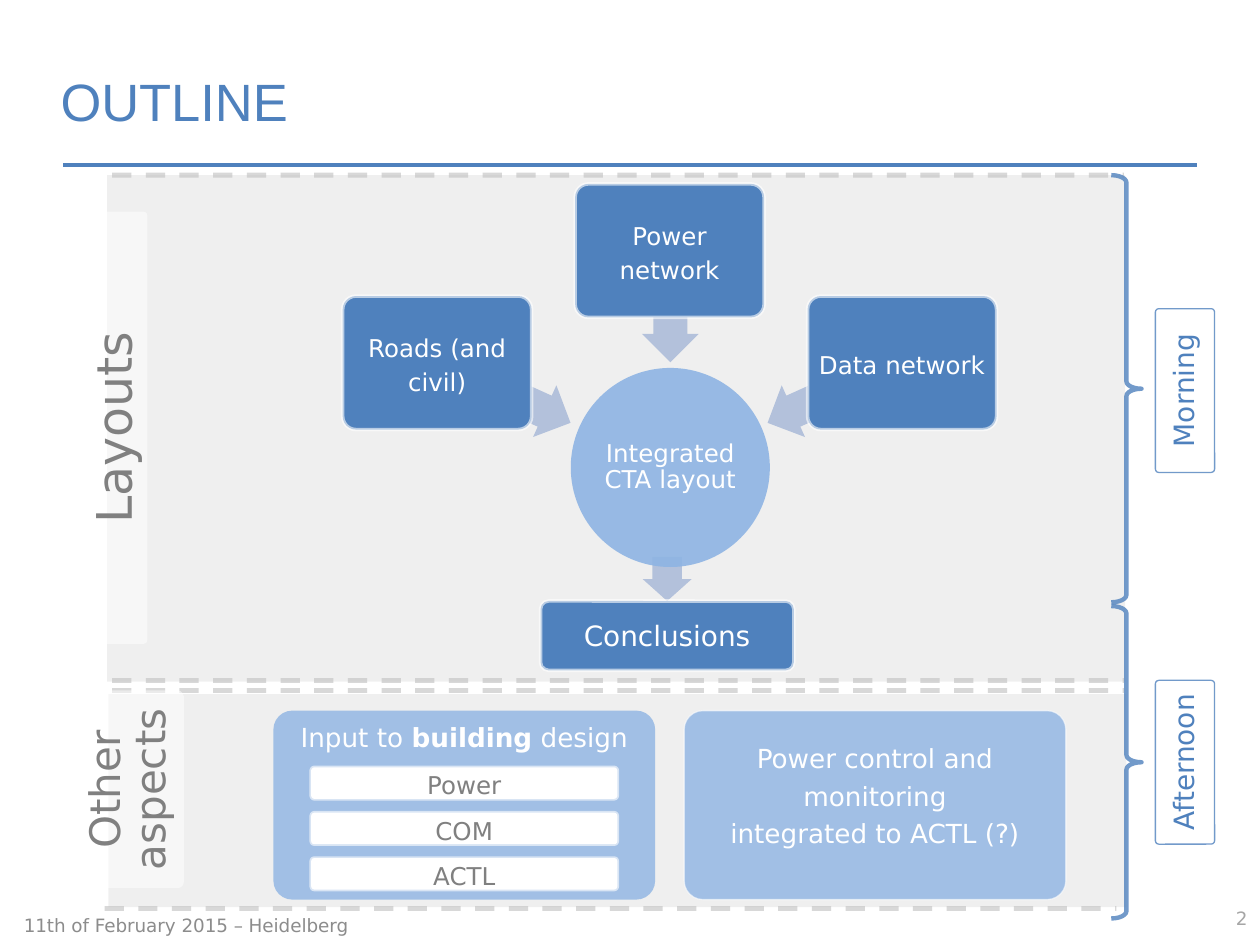
from pptx import Presentation
from pptx.dml.color import RGBColor
from pptx.enum.dml import MSO_LINE
from pptx.enum.shapes import MSO_CONNECTOR, MSO_SHAPE
from pptx.enum.text import MSO_ANCHOR, PP_ALIGN
from pptx.oxml.ns import qn
from pptx.oxml.xmlchemy import OxmlElement
from pptx.util import Inches, Pt

ROUNDED = MSO_SHAPE.ROUNDED_RECTANGLE
RECTANGLE = MSO_SHAPE.RECTANGLE
ELLIPSE = MSO_SHAPE.OVAL
ARROW = MSO_SHAPE.LEFT_ARROW
BRACE = MSO_SHAPE.RIGHT_BRACE
STRAIGHT = MSO_CONNECTOR.STRAIGHT
DASH = MSO_LINE.DASH
LEFT, CENTER, RIGHT = PP_ALIGN.LEFT, PP_ALIGN.CENTER, PP_ALIGN.RIGHT
MIDDLE, BOTTOM = MSO_ANCHOR.MIDDLE, MSO_ANCHOR.BOTTOM

BLUE, LIGHT_BLUE, ARROW_BLUE = "4F81BD", "8EB4E3", "B3C1DB"
WHITE, GRAY, PANEL_GRAY, DASH_GRAY = "FFFFFF", "808080", "D9D9D9", "BFBFBF"
BODY_FONT = "DejaVu Sans"
WHITE_EDGE = (WHITE, 2, 60)

TITLE = "OUTLINE"
FOOTER = "11th of February 2015 – Heidelberg"
PAGE = "2"
PANELS = [(0.85, 1.39, 4.02, 1.39, 5.4), (0.86, 5.51, 1.69, 5.48, 7.21)]
SECTIONS = [("Layouts", 28, (0.67, 1.68, 0.5, 3.43)),
            ("Other aspects", 24, (0.59, 5.48, 0.87, 1.57))]
NETWORKS = [("Roads (and civil)", 2.35, (3.41, 2.89, 1.17, 0.45), 204.3),
            ("Power network", 1.46, (4.88, 2.21, 0.88, 0.45), 270),
            ("Data network", 2.35, (6.04, 2.89, 1.17, 0.45), 335.7)]
HUB = "Integrated CTA layout"
RESULT = "Conclusions"
INPUT_HEADING = [("Input to ", False), ("building", True), (" design", False)]
INPUTS = ["Power", "COM", "ACTL"]
CONTROL = ["Power control and monitoring", "integrated to ACTL (?)"]
SESSIONS = [("Morning", 1.39, 3.39, 2.45), ("Afternoon", 4.81, 2.48, 5.4)]

NETWORK_LEFT, NETWORK_STEP = 2.72, 1.845
CARD_LEFT, CARD_STEP, CARD_TOP, CARD_SIZE = 2.17, 3.26, 5.64, (3.03, 1.5)
INPUT_TOP, INPUT_STEP = 6.09, 0.36


def rgb(color):
    return RGBColor.from_string(color)


def set_alpha(container, percent):
    if percent < 100:
        alpha = OxmlElement("a:alpha")
        alpha.set("val", str(percent * 1000))
        container.find(qn("a:solidFill"))[0].append(alpha)


def set_line(shape, color, width, alpha=100):
    shape.line.color.rgb = rgb(color)
    shape.line.width = Pt(width)
    set_alpha(shape.element.spPr.find(qn("a:ln")), alpha)


def add_rule(slide, left, right, y, color, width, alpha=100, dash=None):
    rule = slide.shapes.add_connector(
        STRAIGHT, Inches(left), Inches(y), Inches(right), Inches(y))
    set_line(rule, color, width, alpha)
    if dash is not None:
        rule.line.dash_style = dash
    rule.element.spPr.append(OxmlElement("a:effectLst"))


def add_box(slide, kind, place, fill=None, alpha=100, line=None, adjust=(), rotation=0):
    shape = slide.shapes.add_shape(kind, *map(Inches, place))
    shape.shadow.inherit = False
    shape.rotation = rotation
    for index, value in enumerate(adjust):
        shape.adjustments[index] = value
    if fill:
        shape.fill.solid()
        shape.fill.fore_color.rgb = rgb(fill)
        set_alpha(shape.element.spPr, alpha)
    else:
        shape.fill.background()
    if line:
        set_line(shape, *line)
    else:
        shape.line.fill.background()
    return shape


def write(shape, paragraphs, size, color, align=CENTER, spacing=None, inset=0,
          vertical=False, font=BODY_FONT, anchor=MIDDLE):
    frame = shape.text_frame
    frame.word_wrap = True
    frame.vertical_anchor = anchor
    frame.margin_left = frame.margin_right = Inches(inset)
    frame.margin_top = frame.margin_bottom = Inches(min(inset, 0.05))
    if vertical:
        frame._txBody.bodyPr.set("vert", "vert270")
    for index, runs in enumerate(paragraphs):
        paragraph = frame.add_paragraph() if index else frame.paragraphs[0]
        paragraph.alignment = align
        if spacing:
            paragraph.line_spacing = spacing
        for text, bold in runs:
            run = paragraph.add_run()
            run.text = text
            run.font.name = font
            run.font.size = Pt(size)
            run.font.bold = bold
            run.font.color.rgb = rgb(color)


def plain(*texts):
    return [[(text, False)] for text in texts]


def add_label(slide, place, paragraphs, size, color, **options):
    write(slide.shapes.add_textbox(*map(Inches, place)), paragraphs, size, color, **options)


def add_frame(slide):
    title = slide.shapes.title
    title.left, title.top, title.width, title.height = map(Inches, (0.44, 0.25, 9.12, 0.84))
    write(title, plain(TITLE), 30, BLUE, align=LEFT, inset=0.04, font="Arial", anchor=BOTTOM)
    add_rule(slide, 0.5, 9.5, 1.31, BLUE, 2.25)
    for left, top, height, *edges in PANELS:
        add_box(slide, RECTANGLE, (left, top, 8.08, height), PANEL_GRAY, 40)
        for y in edges:
            start = 0.83 if y > 7 else 0.89
            add_rule(slide, start, start + 8.03, y, DASH_GRAY, 2.75, 60, DASH)
    for text, size, place in SECTIONS:
        tab = add_box(slide, ROUNDED, place, WHITE, 50, adjust=[0.058])
        write(tab, plain(text), size, GRAY, spacing=0.9, vertical=True)
    add_label(slide, (0.09, 7.14, 4.59, 0.4), plain(FOOTER), 10.5, "8C8C8C", align=LEFT, inset=0.1)
    add_label(slide, (7.67, 7.09, 2.33, 0.4), plain(PAGE), 10.5, "A6A6A6", align=RIGHT, inset=0.1)


def add_layouts(slide):
    add_box(slide, ARROW, (5.12, 4.4, 0.35, 0.39), ARROW_BLUE, adjust=[0.6, 0.5], rotation=270)
    hub = add_box(slide, ELLIPSE, (4.53, 2.92, 1.58, 1.58), LIGHT_BLUE, 90)
    write(hub, plain(HUB), 14, WHITE, spacing=0.9, inset=0.01)
    for column, (text, top, arrow, rotation) in enumerate(NETWORKS):
        add_box(slide, ARROW, arrow, ARROW_BLUE, adjust=[0.6, 0.5], rotation=rotation)
        place = (NETWORK_LEFT + column * NETWORK_STEP, top, 1.5, 1.06)
        box = add_box(slide, ROUNDED, place, BLUE, line=WHITE_EDGE, adjust=[0.1])
        write(box, plain(text), 14, WHITE, spacing=1.14, inset=0.03)
    result = add_box(slide, ROUNDED, (4.29, 4.77, 2.01, 0.55), BLUE,
                     line=WHITE_EDGE, adjust=[0.115])
    write(result, plain(RESULT), 16, WHITE, inset=0.1)


def add_aspects(slide):
    control_left = CARD_LEFT + CARD_STEP
    for left, line in ((CARD_LEFT, None), (control_left, (WHITE, 0.75, 60))):
        add_box(slide, ROUNDED, (left, CARD_TOP, *CARD_SIZE), LIGHT_BLUE, 80, line, [0.1])
    add_label(slide, (CARD_LEFT, CARD_TOP, CARD_SIZE[0], 0.45), [INPUT_HEADING], 15, WHITE,
              spacing=0.9, inset=0.06)
    for row, text in enumerate(INPUTS):
        place = (CARD_LEFT + 0.3, INPUT_TOP + row * INPUT_STEP, 2.43, 0.25)
        box = add_box(slide, ROUNDED, place, WHITE, line=WHITE_EDGE, adjust=[0.1])
        write(box, plain(text), 14, GRAY, spacing=1.14)
    add_label(slide, (control_left, CARD_TOP, CARD_SIZE[0], 1.3), plain(*CONTROL), 15, WHITE,
              spacing=1.2, inset=0.12)


def add_sessions(slide):
    for text, top, height, label_top in SESSIONS:
        add_box(slide, BRACE, (8.82, top, 0.24, height), line=(BLUE, 2.5, 80), adjust=[0.243, 0.5])
        label = add_box(slide, ROUNDED, (9.17, label_top, 0.47, 1.3), WHITE, 50,
                        (BLUE, 0.75, 80), [0.058])
        write(label, plain(text), 16, BLUE, spacing=0.9, vertical=True)


def main():
    presentation = Presentation()
    presentation.slide_width, presentation.slide_height = Inches(10), Inches(7.5)
    slide = presentation.slides.add_slide(presentation.slide_layouts[5])
    add_frame(slide)
    add_layouts(slide)
    add_aspects(slide)
    add_sessions(slide)
    presentation.save("out.pptx")


if __name__ == "__main__":
    main()
